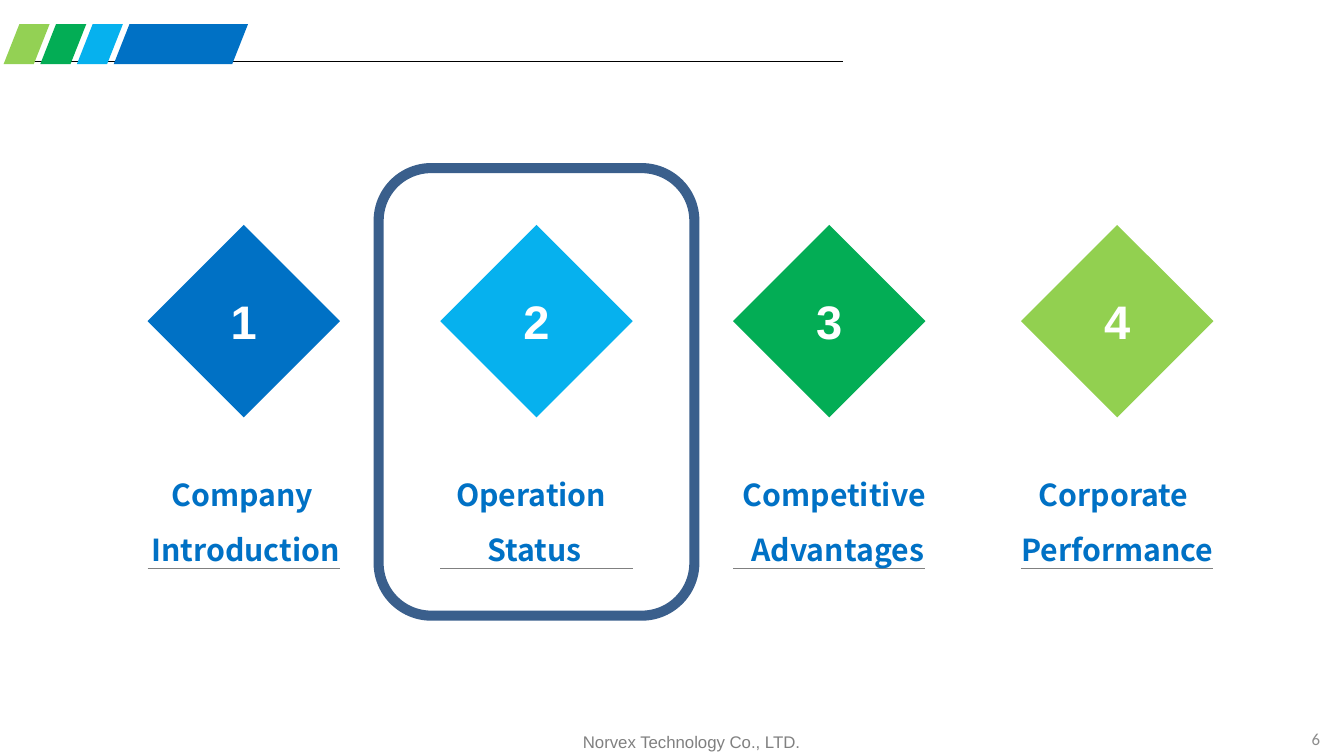
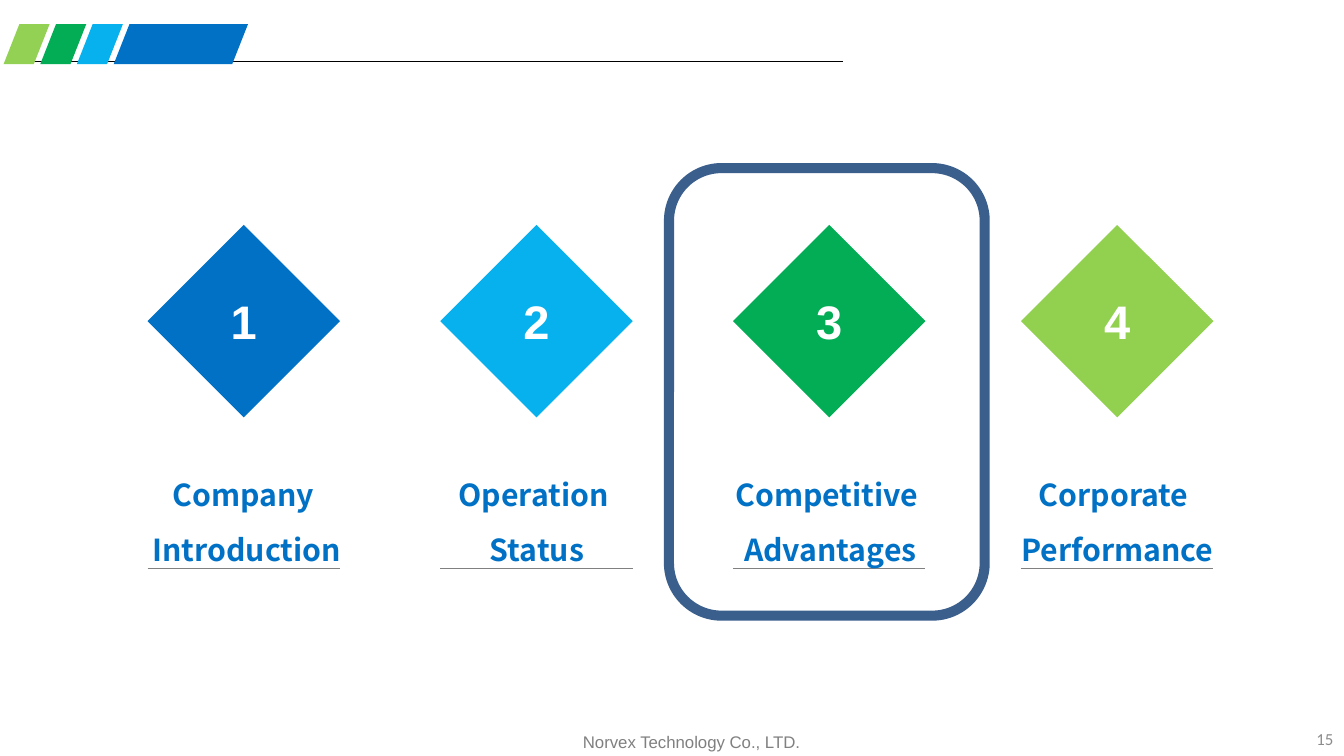
from dataclasses import dataclass

from lxml import etree
from pptx import Presentation
from pptx.dml.color import RGBColor
from pptx.enum import shapes, text
from pptx.oxml.ns import qn
from pptx.util import Inches, Pt

BLUE, SKY, GREEN, LIME = "0071C5", "06B1EE", "03AD55", "92D050"
RIBBON_LIME, FRAME_BLUE = "93D154", "3A5F8C"
WHITE, BLACK, GREY, NUMBER_GREY = "FFFFFF", "000000", "808080", "8C8C8C"

DIAMOND_TOP, DIAMOND_SIZE = 1.86, 1.59
LABEL_TOP, LABEL_HEIGHT, RULE_TOP = 3.74, 0.96, 4.7
RIBBON_TOP, RIBBON_BOTTOM, RIBBON_SLANT = 0.2, 0.53, 0.13
RIBBON_STEP = 0.303


@dataclass(frozen=True)
class Chapter:
    left: float
    color: str
    lines: tuple[str, str]
    label_width: float


@dataclass(frozen=True)
class Agenda:
    page_number: str
    number_left: float
    frame_left: float
    label_lefts: tuple[float, ...]


CHAPTERS = (
    Chapter(1.22, BLUE, ("Company ", "Introduction"), 1.8),
    Chapter(3.64, SKY, ("Operation ", "Status"), 1.56),
    Chapter(6.06, GREEN, ("Competitive ", "Advantages"), 1.83),
    Chapter(8.44, LIME, ("Corporate ", "Performance"), 1.83),
)
AGENDAS = (
    Agenda("6", 10.52, 3.13, (1.13, 3.64, 6.01, 8.32)),
    Agenda("15", 10.63, 5.53, (1.14, 3.66, 5.95, 8.32)),
)


def rgb(color: str) -> RGBColor:
    return RGBColor.from_string(color)


def write(shape, lines, size: float, font: str, color: str, bold: bool = False,
          align=text.PP_ALIGN.CENTER, spacing: float | None = None) -> None:
    """Set one paragraph per line, then format every run alike."""
    frame = shape.text_frame
    frame.text = "\n".join(lines)
    for para in frame.paragraphs:
        para.alignment = align
        para.line_spacing = spacing
        for span in para.runs:
            span.font.size, span.font.name, span.font.bold = Pt(size), font, bold
            span.font.color.rgb = rgb(color)


def paint(shape, fill: str | None = None, line: str | None = None, weight: float = 0.75) -> None:
    shape.shadow.inherit = False
    if fill:
        shape.fill.solid()
        shape.fill.fore_color.rgb = rgb(fill)
    else:
        shape.fill.background()
    if line:
        shape.line.color.rgb = rgb(line)
        shape.line.width = Pt(weight)
    else:
        shape.line.fill.background()


def add_box(page, left: float, top: float, width: float, height: float, wrap: bool = True):
    box = page.shapes.add_textbox(Inches(left), Inches(top), Inches(width), Inches(height))
    box.text_frame.word_wrap = wrap
    return box


def add_rule(page, left: float, right: float, top: float, color: str):
    rule = page.shapes.add_connector(
        shapes.MSO_CONNECTOR.STRAIGHT, Inches(left), Inches(top), Inches(right), Inches(top))
    rule.line.color.rgb = rgb(color)
    rule.line.width = Pt(0.75)
    etree.SubElement(rule.element.spPr, qn("a:effectLst"))
    return rule


def add_ribbon(page, left: float, width: float, color: str) -> None:
    """Draw a slanted band; left and width span the whole outline."""
    right = left + width
    outline = ((left + RIBBON_SLANT, RIBBON_TOP), (right, RIBBON_TOP),
               (right - RIBBON_SLANT, RIBBON_BOTTOM), (left, RIBBON_BOTTOM))
    start, *rest = [(Inches(x), Inches(y)) for x, y in outline]
    builder = page.shapes.build_freeform(*start)
    builder.add_line_segments(rest, close=True)
    paint(builder.convert_to_shape(), color)


def draw_theme(page) -> None:
    footer = add_box(page, 4.09, 6, 3.25, 0.28)
    write(footer, ["Norvex Technology Co., LTD."], 10, "Arial", GREY)
    add_rule(page, 0.07, 6.97, 0.51, BLACK)
    add_ribbon(page, 0.94, 1.11, BLUE)
    for index, color in enumerate((RIBBON_LIME, GREEN, SKY)):
        add_ribbon(page, 0.03 + index * RIBBON_STEP, 0.38, color)


def move_to_layout(page) -> None:
    """Hand the shapes of a page over to its layout, so all pages share them."""
    layout = page.slide_layout
    for placeholder in list(layout.placeholders):
        layout.shapes.element.remove(placeholder.element)
    for shape in list(page.shapes):
        layout.shapes.element.append(shape.element)


def draw_chapter(page, number: int, chapter: Chapter, label_left: float) -> None:
    diamond = page.shapes.add_shape(
        shapes.MSO_SHAPE.DIAMOND, Inches(chapter.left), Inches(DIAMOND_TOP),
        Inches(DIAMOND_SIZE), Inches(DIAMOND_SIZE))
    paint(diamond, chapter.color)
    diamond.text_frame.vertical_anchor = text.MSO_ANCHOR.MIDDLE
    write(diamond, [str(number)], 28, "Arial", WHITE, bold=True)
    add_rule(page, chapter.left, chapter.left + DIAMOND_SIZE, RULE_TOP, GREY)
    label = add_box(page, label_left, LABEL_TOP, chapter.label_width, LABEL_HEIGHT, wrap=False)
    label.text_frame.auto_size = text.MSO_AUTO_SIZE.SHAPE_TO_FIT_TEXT
    write(label, chapter.lines, 18, "Noto Sans CJK SC", BLUE, bold=True, spacing=1.5)


def draw_agenda(page, agenda: Agenda) -> None:
    number = add_box(page, agenda.number_left, 5.96, 0.49, 0.29)
    number.text_frame.vertical_anchor = text.MSO_ANCHOR.MIDDLE
    write(number, [agenda.page_number], 10, "Calibri", NUMBER_GREY, align=text.PP_ALIGN.RIGHT)
    for index, (chapter, label_left) in enumerate(zip(CHAPTERS, agenda.label_lefts), 1):
        draw_chapter(page, index, chapter, label_left)
    frame = page.shapes.add_shape(
        shapes.MSO_SHAPE.ROUNDED_RECTANGLE, Inches(agenda.frame_left), Inches(1.39),
        Inches(2.61), Inches(3.7))
    paint(frame, line=FRAME_BLUE, weight=6)


def main() -> None:
    deck = Presentation()
    deck.slide_width, deck.slide_height = Inches(11.11), Inches(6.25)
    blank = deck.slide_layouts[6]
    pages = [deck.slides.add_slide(blank) for _ in AGENDAS]
    draw_theme(pages[0])
    move_to_layout(pages[0])
    for page, agenda in zip(pages, AGENDAS):
        draw_agenda(page, agenda)
    deck.save("out.pptx")


if __name__ == "__main__":
    main()
